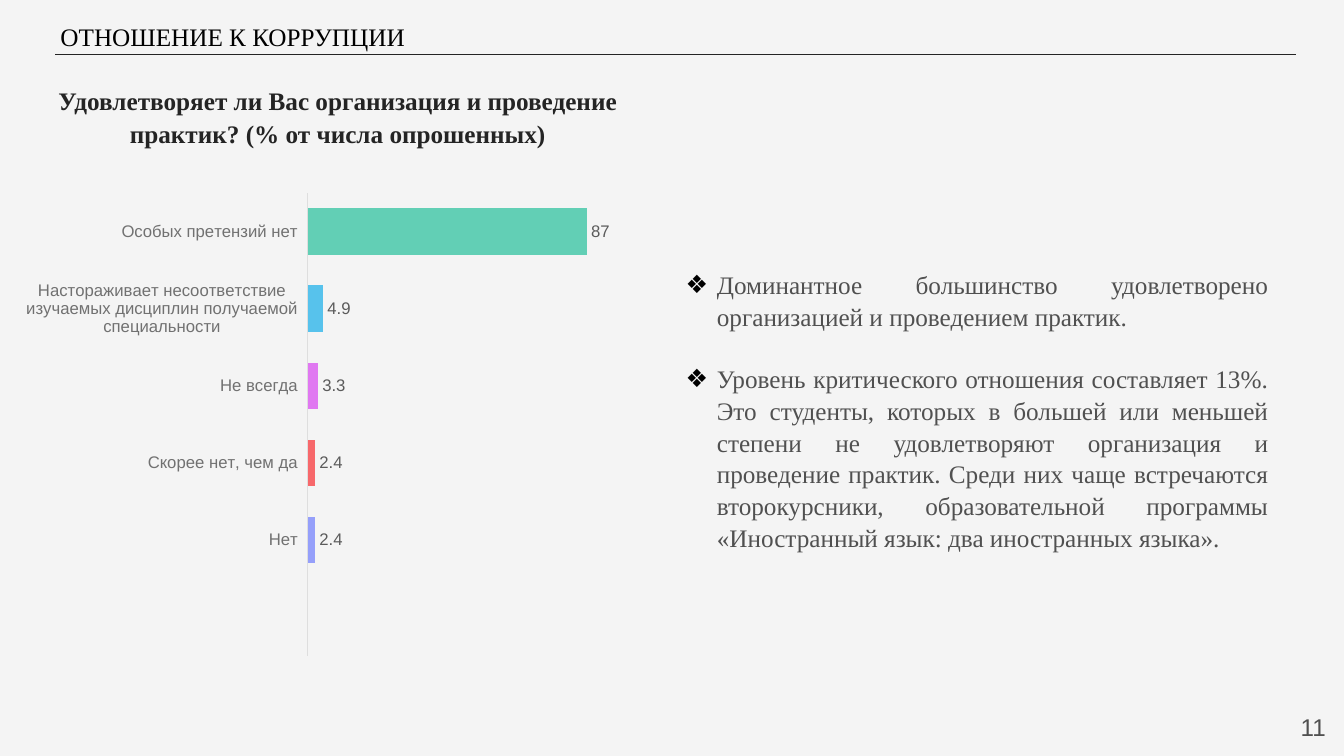
"""Build the slide on student satisfaction with internships."""
from lxml import etree
from pptx import Presentation
from pptx.chart.data import CategoryChartData
from pptx.dml.color import RGBColor
from pptx.enum.chart import XL_CHART_TYPE, XL_LABEL_POSITION, XL_TICK_LABEL_POSITION, XL_TICK_MARK
from pptx.enum.text import MSO_ANCHOR, MSO_AUTO_SIZE, PP_ALIGN
from pptx.oxml import parse_xml
from pptx.oxml.ns import nsdecls, qn
from pptx.util import Inches, Pt

BAR_CLUSTERED = XL_CHART_TYPE.BAR_CLUSTERED
OUTSIDE_END = XL_LABEL_POSITION.OUTSIDE_END
NO_TICK = XL_TICK_MARK.NONE
LOW = XL_TICK_LABEL_POSITION.LOW
LEFT, CENTER, RIGHT, JUSTIFY = PP_ALIGN.LEFT, PP_ALIGN.CENTER, PP_ALIGN.RIGHT, PP_ALIGN.JUSTIFY
TOP, MIDDLE = MSO_ANCHOR.TOP, MSO_ANCHOR.MIDDLE
NO_FIT = MSO_AUTO_SIZE.NONE

COLORS = {
    "background": "F4F4F4", "rule": "242424", "header": "000000", "question": "242424",
    "body": "505050", "category": "717171", "value": "5B5B5B", "axis": "DEDEDE",
    "green": "62CFB5", "blue": "57C2EC", "pink": "E078F1", "red": "F7686B", "violet": "959FFA",
}
SERIF, SANS = "Times New Roman", "Arial"

ANSWERS = [
    ("", None, "blue"),
    ("Нет", 2.4, "violet"),
    ("Скорее нет, чем да", 2.4, "red"),
    ("Не всегда", 3.3, "pink"),
    ("Настораживает несоответствие изучаемых дисциплин получаемой специальности", 4.9, "blue"),
    ("Особых претензий нет", 87, "green"),
]
FINDINGS = [
    "Доминантное большинство удовлетворено организацией и проведением практик.",
    "Уровень критического отношения составляет 13%. Это студенты, которых в большей или меньшей "
    "степени не удовлетворяют организация и проведение практик. Среди них чаще встречаются "
    "второкурсники, образовательной программы «Иностранный язык: два иностранных языка».",
]


def style_font(font, size, name, color):
    font.size, font.name = Pt(size), name
    font.color.rgb = RGBColor.from_string(COLORS[color])


def fill_text(box, place, text, size, name, color, align, inset=0.13, anchor=TOP, spacing=1.0):
    box.left, box.top, box.width, box.height = [Inches(value) for value in place]
    frame = box.text_frame
    frame.text = text
    frame.word_wrap = True
    frame.auto_size = NO_FIT
    frame.vertical_anchor = anchor
    frame.margin_left = frame.margin_right = Inches(max(inset, 0.1))
    frame.margin_top = frame.margin_bottom = Inches(inset)
    for para in frame.paragraphs:
        para.alignment = align
        para.line_spacing = spacing
        para.space_before = Pt(0)
        for span in para.runs:
            style_font(span.font, size, name, color)


deck = Presentation()
deck.slide_width, deck.slide_height = Inches(13.33), Inches(7.5)
page = deck.slides.add_slide(deck.slide_layouts[1])
page.background.fill.solid()
page.background.fill.fore_color.rgb = RGBColor.from_string(COLORS["background"])

rule = page.shapes.add_connector(1, Inches(0.55), Inches(0.54), Inches(12.85), Inches(0.54))
rule.line.color.rgb = RGBColor.from_string(COLORS["rule"])
rule.line.width = Pt(0.75)
etree.SubElement(rule._element.spPr, qn("a:effectLst"))

header = page.shapes.title
fill_text(header, (0.5, 0.16, 12.63, 0.4), "ОТНОШЕНИЕ К КОРРУПЦИИ", 18, SERIF, "header", LEFT, 0.05)

question = page.shapes.add_textbox(0, 0, 0, 0)
fill_text(question, (0.26, 0.7, 6.18, 0.88),
          "Удовлетворяет ли Вас организация и проведение практик? (% от числа опрошенных)",
          18, SERIF, "question", CENTER, spacing=1.07)
question.text_frame.paragraphs[0].runs[0].font.bold = True

findings = page.placeholders[1]
fill_text(findings, (6.67, 2.53, 6.04, 2.8), "\n".join(FINDINGS), 18, SERIF, "body", JUSTIFY, spacing=1.05)
findings.text_frame.paragraphs[1].space_before = Pt(21.7)
for para in findings.text_frame.paragraphs:
    properties = para._p.get_or_add_pPr()
    properties.set("marL", str(Inches(0.31)))
    properties.set("indent", str(-Inches(0.31)))
    bullet_color = etree.SubElement(properties, qn("a:buClr"))
    etree.SubElement(bullet_color, qn("a:srgbClr"), val=COLORS["header"])
    etree.SubElement(properties, qn("a:buFont"), typeface=SANS)
    etree.SubElement(properties, qn("a:buChar"), char="❖")

number = page.shapes.add_textbox(0, 0, 0, 0)
fill_text(number, (12.48, 6.93, 0.8, 0.57), "11", 17.3, SANS, "body", RIGHT, anchor=MIDDLE)

data = CategoryChartData()
data.categories = [answer for answer, share, color in ANSWERS]
data.add_series("Series 1", [share for answer, share, color in ANSWERS])
chart = page.shapes.add_chart(
    BAR_CLUSTERED, Inches(0.26), Inches(1.91), Inches(6.04), Inches(4.89), data).chart
chart.has_legend = False
chart.has_title = False
style_font(chart.font, 12, SANS, "question")

answers_axis = chart.category_axis
answers_axis.major_tick_mark = answers_axis.minor_tick_mark = NO_TICK
answers_axis.tick_label_position = LOW
style_font(answers_axis.tick_labels.font, 12, SANS, "category")
answers_axis.format.line.color.rgb = RGBColor.from_string(COLORS["axis"])
answers_axis.format.line.width = Pt(0.75)
share_axis = chart.value_axis
share_axis.minimum_scale, share_axis.maximum_scale = 0, 100
share_axis.has_major_gridlines = False
share_axis.visible = False

plot = chart.plots[0]
plot.gap_width = 66
plot.vary_by_categories = False
series = plot.series[0]
series.format.fill.solid()
series.format.fill.fore_color.rgb = RGBColor.from_string(COLORS["green"])
for index, (answer, share, color) in enumerate(ANSWERS):
    bar_fill = series.points[index].format.fill
    bar_fill.solid()
    bar_fill.fore_color.rgb = RGBColor.from_string(COLORS[color])
labels = series.data_labels
labels.show_value = True
labels.position = OUTSIDE_END
style_font(labels.font, 12, SANS, "value")

plot_area = chart._chartSpace.chart.plotArea
for layout in plot_area.findall(qn("c:layout")):
    plot_area.remove(layout)
plot_area.insert(0, parse_xml(
    f'<c:layout {nsdecls("c")}><c:manualLayout><c:layoutTarget val="inner"/>'
    '<c:xMode val="edge"/><c:yMode val="edge"/><c:x val="0.46"/><c:y val="0"/>'
    '<c:w val="0.53"/><c:h val="0.94"/></c:manualLayout></c:layout>'))

deck.save("out.pptx")
